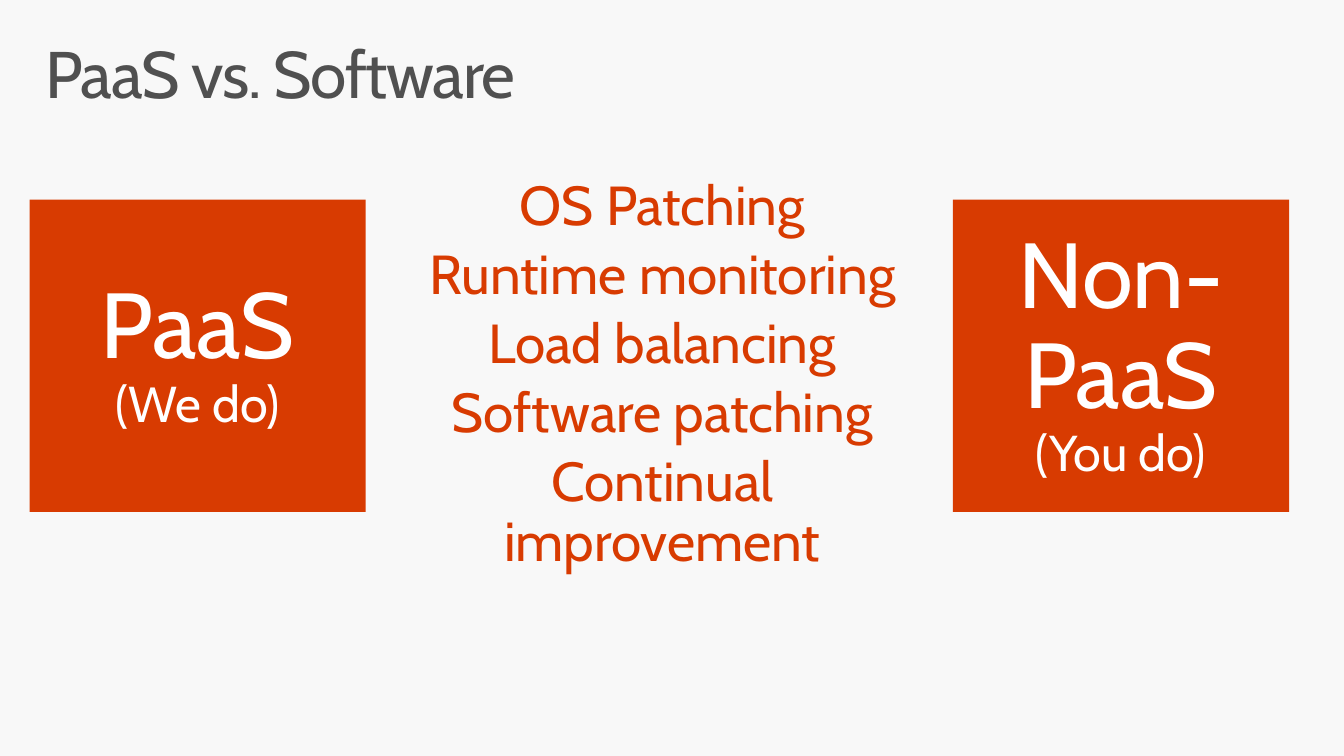
from dataclasses import dataclass

from pptx import Presentation
from pptx.dml.color import RGBColor
from pptx.enum.shapes import MSO_SHAPE
from pptx.enum.text import MSO_ANCHOR, PP_ALIGN
from pptx.shapes.autoshape import Shape
from pptx.slide import Slide
from pptx.text.text import TextFrame
from pptx.util import Cm, Pt

FONT = "Cabin"
ORANGE = "D83B01"
GRAY = "505050"
WHITE = "FFFFFF"
BACKGROUND = "F8F8F8"


@dataclass
class Tile:
    left: float
    name: str
    owner: str


TILES = [
    Tile(0.76, "PaaS", "(We do)"),
    Tile(24.49, "Non-PaaS", "(You do)"),
]
TASKS = [
    "OS Patching",
    "Runtime monitoring",
    "Load balancing",
    "Software patching",
    "Continual improvement",
]


def rgb(color: str) -> RGBColor:
    return RGBColor.from_string(color)


def set_frame(tf: TextFrame, side: float, top: float, anchor: MSO_ANCHOR) -> None:
    tf.word_wrap = True
    tf.vertical_anchor = anchor
    tf.margin_left = tf.margin_right = Cm(side)
    tf.margin_top = tf.margin_bottom = Cm(top)


def add_text(tf: TextFrame, text: str, *, size: float, color: str,
             align: PP_ALIGN = PP_ALIGN.CENTER, before: float = 0,
             spacing: int = 0) -> None:
    p = tf.paragraphs[0] if not tf.text else tf.add_paragraph()
    p.alignment = align
    p.line_spacing = 0.9
    p.space_before = Pt(before)
    r = p.add_run()
    r.text = text
    r.font.name = FONT
    r.font.size = Pt(size)
    r.font.color.rgb = rgb(color)
    if spacing:
        r.font._element.set("spc", str(spacing))


def add_box(s: Slide, left: float, top: float, width: float, height: float) -> TextFrame:
    tf = s.shapes.add_textbox(Cm(left), Cm(top), Cm(width), Cm(height)).text_frame
    set_frame(tf, 0.41, 0.25, MSO_ANCHOR.TOP)
    return tf


def add_tile(s: Slide, tile: Tile) -> Shape:
    sp = s.shapes.add_shape(MSO_SHAPE.RECTANGLE, Cm(tile.left), Cm(5.13), Cm(8.64), Cm(8.03))
    sp.shadow.inherit = False
    sp.fill.solid()
    sp.fill.fore_color.rgb = rgb(ORANGE)
    sp.line.fill.background()
    tf = sp.text_frame
    set_frame(tf, 0.51, 0.41, MSO_ANCHOR.MIDDLE)
    add_text(tf, tile.name, size=67.3, color=WHITE)
    add_text(tf, tile.owner, size=36.7, color=WHITE)
    return sp


def main() -> None:
    prs = Presentation()
    prs.slide_width, prs.slide_height = Cm(34.54), Cm(19.43)
    s = prs.slides.add_slide(prs.slide_layouts[6])
    s.background.fill.solid()
    s.background.fill.fore_color.rgb = rgb(BACKGROUND)

    title = add_box(s, 0.76, 0.81, 33.02, 2.54)
    add_text(title, "PaaS vs. Software", size=48, color=GRAY,
             align=PP_ALIGN.LEFT, spacing=-100)

    tasks = add_box(s, 9.63, 4.32, 14.78, 9.58)
    for task in TASKS:
        add_text(tasks, task, size=40, color=ORANGE, before=7.2)

    for tile in TILES:
        add_tile(s, tile)

    prs.save("out.pptx")


if __name__ == "__main__":
    main()
